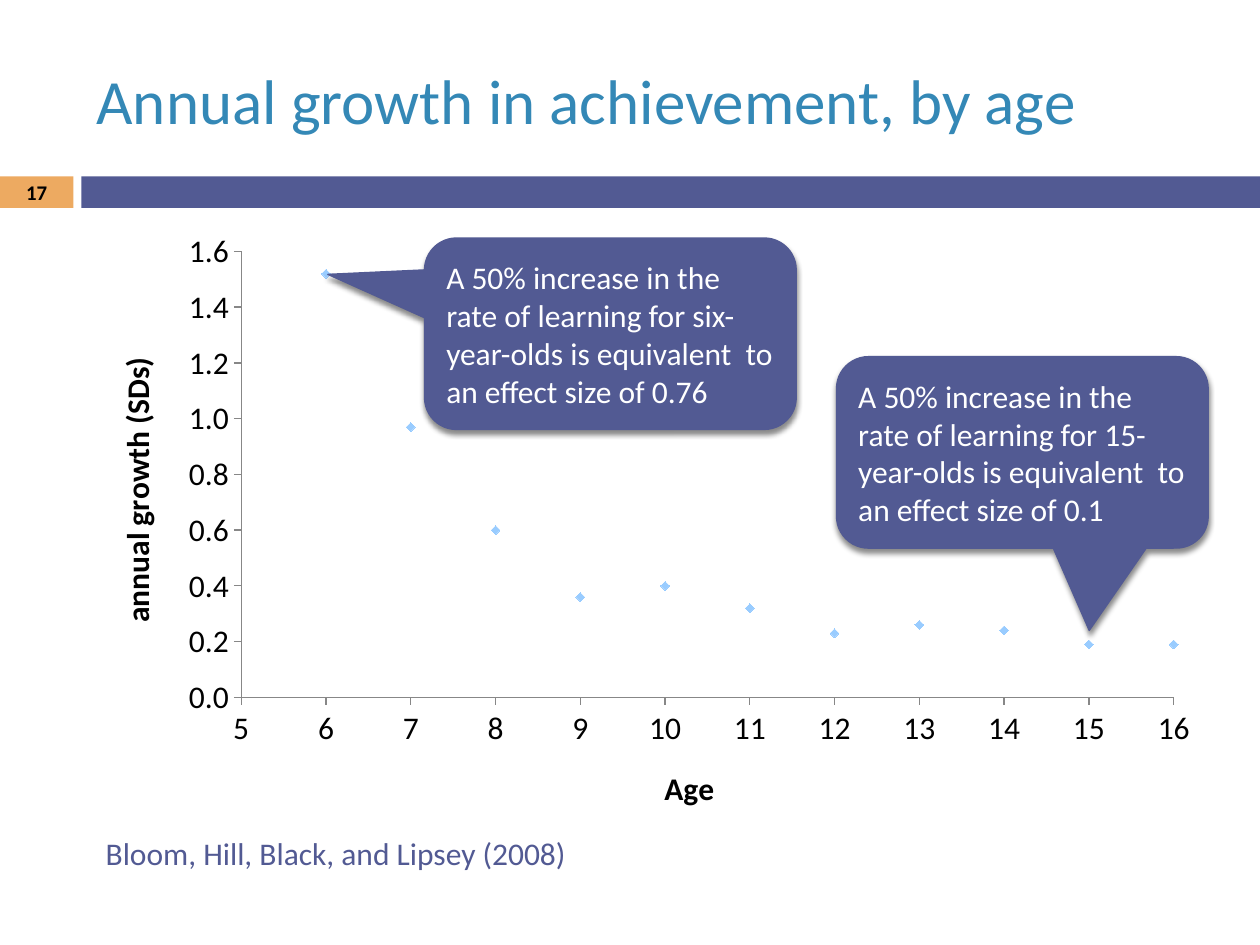
from lxml import etree
from pptx import Presentation
from pptx.chart.data import XyChartData
from pptx.dml.color import RGBColor
from pptx.enum.chart import XL_CHART_TYPE, XL_MARKER_STYLE, XL_TICK_MARK
from pptx.enum.shapes import MSO_SHAPE
from pptx.enum.text import MSO_ANCHOR, PP_ALIGN
from pptx.oxml import parse_xml
from pptx.oxml.ns import nsdecls, qn
from pptx.util import Pt

RECT = MSO_SHAPE.RECTANGLE
CALLOUT = MSO_SHAPE.ROUNDED_RECTANGULAR_CALLOUT
SCATTER = XL_CHART_TYPE.XY_SCATTER
DIAMOND = XL_MARKER_STYLE.DIAMOND
OUTSIDE = XL_TICK_MARK.OUTSIDE
MIDDLE, TOP = MSO_ANCHOR.MIDDLE, MSO_ANCHOR.TOP
LEFT, CENTER = PP_ALIGN.LEFT, PP_ALIGN.CENTER

FONT = "Calibri"
INDIGO, ORANGE, BLUE = "525A93", "EDAA61", "3488B6"
SKY, GRAY, BLACK, WHITE = "99CCFF", "878787", "000000", "FFFFFF"


def rgb(value):
    return RGBColor.from_string(value)


class SlideBuilder:
    def __init__(self, slide, font):
        self.slide = slide
        self.font = font

    def style(self, font, size, color, bold=False):
        font.name = self.font
        font.size = Pt(size)
        font.bold = bold
        font.color.rgb = rgb(color)

    def add_text(self, tf, text, size, color, bold=False, align=LEFT, anchor=MIDDLE):
        tf.word_wrap = True
        tf.vertical_anchor = anchor
        p = tf.paragraphs[0]
        p.alignment = align
        r = p.add_run()
        r.text = text
        self.style(r.font, size, color, bold)

    def title(self, text, box):
        sp = self.slide.shapes.title
        sp.left, sp.top, sp.width, sp.height = map(Pt, box)
        self.add_text(sp.text_frame, text, 36, BLUE)

    def text(self, text, box, size, color, **options):
        sp = self.slide.shapes.add_textbox(*map(Pt, box))
        self.add_text(sp.text_frame, text, size, color, **options)

    def shape(self, kind, box, fill):
        sp = self.slide.shapes.add_shape(kind, *map(Pt, box))
        sp.shadow.inherit = False
        sp.fill.solid()
        sp.fill.fore_color.rgb = rgb(fill)
        sp.line.fill.background()
        return sp

    def callout(self, text, left, top, tip):
        sp = self.shape(CALLOUT, (left, top, 212.4, 109.4), INDIGO)
        sp.line.color.rgb = rgb(INDIGO)
        sp.line.width = Pt(0.79)
        sp.adjustments[0], sp.adjustments[1] = tip
        effects = sp._element.spPr.find(qn("a:effectLst"))
        shadow = etree.SubElement(
            effects, qn("a:outerShdw"), blurRad=str(Pt(3)), dist=str(Pt(2.4)),
            dir="5400000", rotWithShape="0")
        color = etree.SubElement(shadow, qn("a:srgbClr"), val=BLACK)
        etree.SubElement(color, qn("a:alpha"), val="45000")
        self.add_text(sp.text_frame, text, 18, WHITE)

    def axis(self, axis, title, low, high, step, number_format):
        axis.minimum_scale, axis.maximum_scale = low, high
        axis.major_unit = step
        axis.has_major_gridlines = False
        axis.major_tick_mark = OUTSIDE
        axis.tick_labels.number_format = number_format
        axis.tick_labels.number_format_is_linked = False
        axis.format.line.color.rgb = rgb(GRAY)
        axis.format.line.width = Pt(0.75)
        r = axis.axis_title.text_frame.paragraphs[0].add_run()
        r.text = title
        self.style(r.font, 18, BLACK, True)

    def scatter(self, points, box, plot):
        data = XyChartData()
        series = data.add_series("Series 1")
        for x, y in points:
            series.add_data_point(x, y)
        chart = self.slide.shapes.add_chart(SCATTER, *map(Pt, box), data).chart
        chart.has_legend = False
        chart.has_title = False
        self.style(chart.font, 18, BLACK)
        chart.plots[0].vary_by_categories = False
        self.axis(chart.category_axis, "Age", 5, 16, 1, "General")
        self.axis(chart.value_axis, "annual growth (SDs)", 0, 1.6, 0.2, "#,##0.0")

        s = chart.plots[0].series[0]
        s.smooth = False
        s.format.line.fill.background()
        s.marker.style = DIAMOND
        s.marker.size = 5
        s.marker.format.fill.solid()
        s.marker.format.fill.fore_color.rgb = rgb(SKY)
        s.marker.format.line.color.rgb = rgb(SKY)

        area = chart._chartSpace.chart.plotArea
        for old in area.findall(qn("c:layout")):
            area.remove(old)
        sizes = "".join(f'<c:{k} val="{v}"/>' for k, v in zip("xywh", plot))
        area.insert(0, parse_xml(
            f'<c:layout {nsdecls("c")}><c:manualLayout>'
            '<c:layoutTarget val="inner"/><c:xMode val="edge"/><c:yMode val="edge"/>'
            f'{sizes}</c:manualLayout></c:layout>'))


def main():
    prs = Presentation()
    prs.slide_width, prs.slide_height = Pt(720), Pt(540)
    s = SlideBuilder(prs.slides.add_slide(prs.slide_layouts[5]), FONT)

    s.shape(RECT, (0, 100.8, 42, 18), ORANGE)
    s.shape(RECT, (46.5, 100.8, 673.5, 18), INDIGO)
    s.title("Annual growth in achievement, by age", (48, 18, 642, 78))
    s.text("17", (0, 100, 42, 19.5), 11.9, BLACK, bold=True, align=CENTER)
    s.text("Bloom, Hill, Black, and Lipsey (2008)", (53.3, 473, 492, 29),
           18, INDIGO, anchor=TOP)

    growth = [1.52, 0.97, 0.6, 0.36, 0.4, 0.32, 0.23, 0.26, 0.24, 0.19, 0.19]
    s.scatter(enumerate(growth, start=6), (48, 126, 642, 354),
              (0.14, 0.05, 0.83, 0.72))

    for age, effect, left, top, tip in (
        ("six", "0.76", 242.6, 136, (-0.76, -0.31)),
        ("15", "0.1", 478, 203.8, (0.18, 0.93)),
    ):
        s.callout(f"A 50% increase in the rate of learning for {age}-year-olds "
                  f"is equivalent  to an effect size of {effect}", left, top, tip)

    prs.save("out.pptx")


if __name__ == "__main__":
    main()
